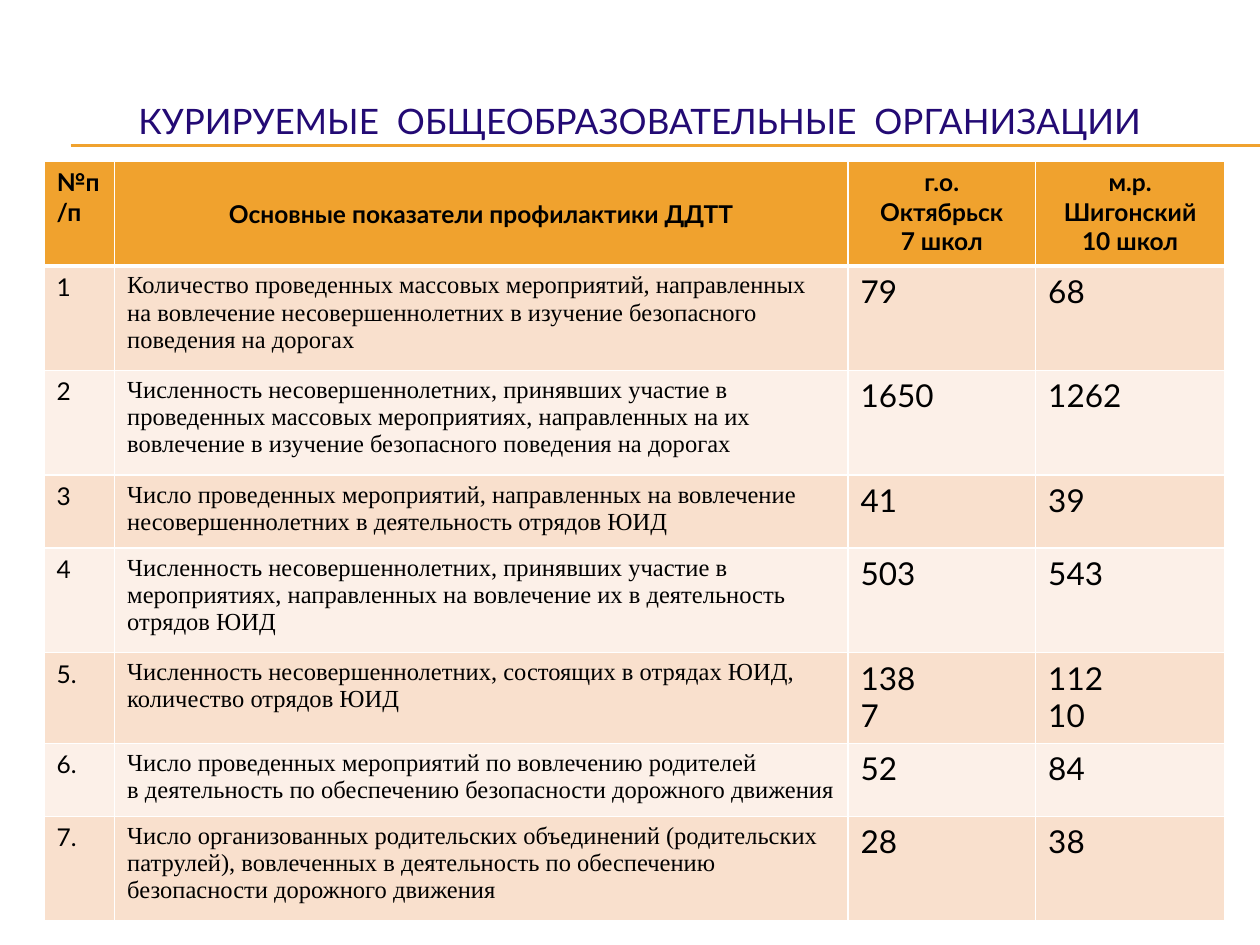
import pptx
import pptx.dml.color
import pptx.enum.shapes
import pptx.enum.text
import pptx.oxml
import pptx.oxml.ns
import pptx.util
from pptx.util import Inches

ORANGE = pptx.dml.color.RGBColor(0xF0, 0xA2, 0x2E)
PEACH = pptx.dml.color.RGBColor(0xF9, 0xE0, 0xCD)
CREAM = pptx.dml.color.RGBColor(0xFC, 0xF0, 0xE8)
NAVY = pptx.dml.color.RGBColor(0x23, 0x0A, 0x74)
BLACK = pptx.dml.color.RGBColor(0, 0, 0)
WHITE = pptx.dml.color.RGBColor(0xFF, 0xFF, 0xFF)
SANS, SERIF = "Lato", "Times New Roman"
LEFT = pptx.enum.text.PP_ALIGN.LEFT
CENTER = pptx.enum.text.PP_ALIGN.CENTER
TOP = pptx.enum.text.MSO_ANCHOR.TOP
MIDDLE = pptx.enum.text.MSO_ANCHOR.MIDDLE

TITLE = "КУРИРУЕМЫЕ  ОБЩЕОБРАЗОВАТЕЛЬНЫЕ  ОРГАНИЗАЦИИ"
HEADER = [
    ["№п/п"],
    ["Основные показатели профилактики ДДТТ"],
    ["г.о. Октябрьск", "7 школ"],
    ["м.р. Шигонский", "10 школ"],
]
INDICATORS = [
    (["1"], ["Количество проведенных массовых мероприятий, направленных на вовлечение "
             "несовершеннолетних в изучение безопасного поведения на дорогах"], ["79"], ["68"]),
    (["2"], ["Численность несовершеннолетних, принявших участие в проведенных массовых "
             "мероприятиях, направленных на их вовлечение в изучение безопасного поведения "
             "на дорогах"], ["1650"], ["1262"]),
    (["3"], ["Число проведенных мероприятий, направленных на вовлечение "
             "несовершеннолетних в деятельность отрядов ЮИД"], ["41"], ["39"]),
    (["4"], ["Численность несовершеннолетних, принявших участие в мероприятиях, "
             "направленных на вовлечение их в деятельность отрядов ЮИД"], ["503"], ["543"]),
    (["5."], ["Численность несовершеннолетних, состоящих в отрядах ЮИД,",
              "количество отрядов ЮИД"], ["138", "7"], ["112", "10"]),
    (["6."], ["Число проведенных мероприятий по вовлечению родителей\v"
              "в деятельность по обеспечению безопасности дорожного движения"], ["52"], ["84"]),
    (["7."], ["Число организованных родительских объединений (родительских патрулей), "
              "вовлеченных в деятельность по обеспечению безопасности дорожного движения"],
     ["28"], ["38"]),
]
COLUMN_WIDTHS = [0.56, 5.82, 1.49, 1.5]
ROW_HEIGHTS = [0.83, 0.83, 0.83, 0.58, 0.83, 0.72, 0.58, 0.83]
COLUMN_FORMATS = [(SANS, 14), (SERIF, 14), (SANS, 18), (SANS, 18)]
RULE_HEIGHTS = [1.15, 1.16]


def write_text(frame, lines, font=SANS, size=14, color=BLACK, bold=False, align=LEFT):
    for index, line in enumerate(lines):
        para = frame.add_paragraph() if index else frame.paragraphs[0]
        para.text = line
        para.alignment = align
        for span in para.runs:
            span.font.name = font
            span.font.size = pptx.util.Pt(size)
            span.font.bold = bold
            span.font.color.rgb = color


def set_borders(cell, **widths):
    properties = cell._tc.get_or_add_tcPr()
    for index, side in enumerate("LRTB"):
        width = pptx.util.Pt(widths.get(side, 1))
        properties.insert(index, pptx.oxml.parse_xml(
            f'<a:ln{side} {pptx.oxml.ns.nsdecls("a")} w="{width}"><a:solidFill>'
            f'<a:srgbClr val="{WHITE}"/></a:solidFill></a:ln{side}>'))


def add_rule(page, height):
    rule = page.shapes.add_connector(
        pptx.enum.shapes.MSO_CONNECTOR.STRAIGHT,
        Inches(0.56), Inches(height), Inches(10), Inches(height))
    rule.line.color.rgb = ORANGE
    rule.line.width = pptx.util.Pt(0.75)
    rule._element.spPr.append(pptx.oxml.parse_xml(
        f'<a:effectLst {pptx.oxml.ns.nsdecls("a")}/>'))


def add_title(page):
    title = page.shapes.title
    title.left, title.top = Inches(0.33), Inches(0.5)
    title.width, title.height = Inches(9.5), Inches(0.92)
    title.text_frame.vertical_anchor = MIDDLE
    write_text(title.text_frame, [TITLE], size=20, color=NAVY, align=CENTER)


def add_indicator_table(page):
    table = page.shapes.add_table(
        len(ROW_HEIGHTS), len(COLUMN_WIDTHS), Inches(0.35), Inches(1.28),
        Inches(sum(COLUMN_WIDTHS)), Inches(sum(ROW_HEIGHTS))).table
    for column, width in zip(table.columns, COLUMN_WIDTHS):
        column.width = Inches(width)
    for row, height in zip(table.rows, ROW_HEIGHTS):
        row.height = Inches(height)

    for row_index, contents in enumerate([HEADER] + INDICATORS):
        for column_index, lines in enumerate(contents):
            cell = table.cell(row_index, column_index)
            cell.fill.solid()
            if row_index == 0:
                cell.fill.fore_color.rgb = ORANGE
                cell.vertical_anchor = MIDDLE if column_index == 1 else TOP
                write_text(cell.text_frame, lines, bold=True,
                           align=CENTER if column_index else LEFT)
                set_borders(cell, B=3)
            else:
                cell.fill.fore_color.rgb = PEACH if row_index % 2 else CREAM
                font, size = COLUMN_FORMATS[column_index]
                write_text(cell.text_frame, lines, font=font, size=size)
                set_borders(cell, T=3 if row_index == 1 else 1)


def main():
    deck = pptx.Presentation()
    deck.slide_width, deck.slide_height = Inches(10), Inches(7.5)
    page = deck.slides.add_slide(deck.slide_layouts[5])
    for height in RULE_HEIGHTS:
        add_rule(page, height)
    add_title(page)
    add_indicator_table(page)
    deck.save("out.pptx")


if __name__ == "__main__":
    main()
